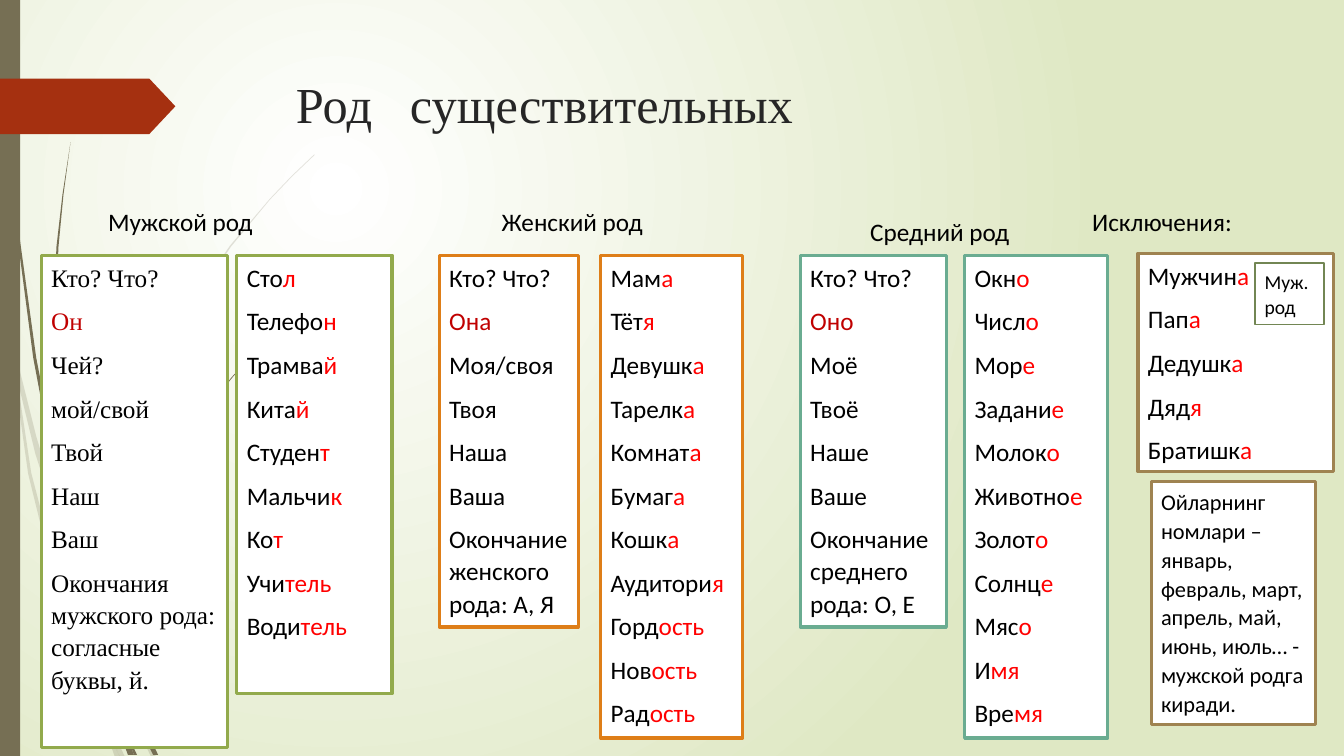
from lxml.etree import SubElement
from pptx import Presentation
from pptx.dml.color import RGBColor
from pptx.enum.shapes import MSO_SHAPE as Preset
from pptx.enum.text import MSO_ANCHOR as Anchor, PP_ALIGN as Align
from pptx.oxml.ns import qn
from pptx.util import Cm, Pt

SANS, SERIF = "Calibri", "Times New Roman"
BLACK, RED, DARK_RED = "000000", "FF0000", "C00000"
OLIVE, RUST = "766F54", "A53010"
GREEN, ORANGE, TEAL, BROWN, MOSS = "92AA4C", "DE7E18", "6AAC91", "9F8351", "728653"

TITLE = "Род   существительных"
HEADINGS = [
    ("Мужской род", 1.88, 5.03, 5.33),
    ("Женский род", 9.86, 5.03, 9.12),
    ("Средний род", 21.46, 5.28, 4.45),
    ("Исключения:", 26.72, 5.03, 5.13),
]
HEADING_HEIGHT = 1.09

MALE_FORMS = ["Кто? Что?", "|Он", "Чей?", "мой/свой", "Твой", "Наш", "Ваш",
              "Окончания мужского рода: согласные буквы, й."]
MALE_WORDS = ["Сто|л", "Телефо|н", "Трамва|й", "Кита|й", "Студен|т", "Мальчи|к",
              "Ко|т", "Учи|тель", "Води|тель"]
FEMALE_FORMS = ["Кто? Что?", "|Она", "Моя/своя", "Твоя", "Наша", "Ваша",
                "Окончание женского рода: А, Я"]
FEMALE_WORDS = ["Мам|а", "Тёт|я", "Девушк|а", "Тарелк|а", "Комнат|а", "Бумаг|а",
                "Кошк|а", "Аудитори|я", "Горд|ость", "Нов|ость", "Рад|ость"]
NEUTER_FORMS = ["Кто? Что?", "|Оно", "Моё", "Твоё", "Наше", "Ваше",
                "Окончание среднего рода: О, Е"]
NEUTER_WORDS = ["Окн|о", "Числ|о", "Мор|е", "Задани|е", "Молок|о", "Животно|е",
                "Золот|о", "Солнц|е", "Мяс|о", "И|мя", "Вре|мя"]
EXCEPTIONS = ["Мужчин|а", "Пап|а", "Дедушк|а", "Дяд|я", "Братишк|а"]
MONTHS = ["Ойларнинг номлари – январь, февраль, март, апрель, май, июнь, июль… - "
          "мужской родга киради."]

TOP = 6.43
CARDS = [
    (MALE_FORMS, (1.04, TOP, 4.7, 12.4), GREEN, 2.25, 18, SERIF, DARK_RED),
    (MALE_WORDS, (5.97, TOP, 3.91, 11.05), GREEN, 2.25, 18, SANS, RED),
    (FEMALE_FORMS, (11.07, TOP, 3.51, 9.37), ORANGE, 2.25, 18, SANS, DARK_RED),
    (FEMALE_WORDS, (15.14, TOP, 3.58, 12.17), ORANGE, 2.25, 18, SANS, RED),
    (NEUTER_FORMS, (20.17, TOP, 3.68, 9.37), TEAL, 2.25, 18, SANS, DARK_RED),
    (NEUTER_WORDS, (24.31, TOP, 3.61, 12.17), TEAL, 2.25, 18, SANS, RED),
    (EXCEPTIONS, (28.68, 6.38, 4.93, 5.51), BROWN, 2.25, 18, SANS, RED),
    (["Муж.род"], (31.62, 6.63, 1.75, 1.55), MOSS, 1.25, 14, SANS, RED),
    (MONTHS, (29.01, 12.14, 4.14, 6.12), BROWN, 2.25, 16, SANS, RED),
]

WISP_UNIT = Cm(2.54) / 100
PALE_WISPS = [
    [(11, 350), (9, 322), (0, 282), (0, 299), (10, 344)],
    [(58, 522), (84, 599), (85, 586), (62, 520), (36, 433), (14, 345), (17, 376), (35, 450)],
    [(92, 607), (88, 596), (88, 610), (123, 694), (150, 751), (155, 751), (127, 692)],
    [(119, 751), (124, 751), (105, 711)],
    [(93, 683), (70, 619), (31, 469), (17, 376), (11, 350), (28, 470), (65, 621),
     (92, 693), (101, 714), (99, 707)],
    [(88, 584), (110, 462), (160, 349), (229, 245), (268, 198), (290, 175), (312, 154),
     (312, 153), (289, 175), (268, 197), (228, 244), (158, 348), (107, 461), (85, 584),
     (85, 586), (88, 596)],
    [(101, 714), (114, 751), (119, 751)],
    [(96, 692), (93, 683), (99, 707), (101, 714), (119, 751), (105, 711)],
]
DARK_WISPS = [
    [(7, 110), (17, 233), (33, 355), (56, 477), (57, 481), (55, 457), (55, 453), (36, 355),
     (19, 232), (8, 109), (5, 48), (4, 0), (3, 0), (4, 48)],
    [(113, 649), (110, 641), (111, 656), (132, 708), (152, 749), (157, 749), (136, 706)],
    [(60, 472), (58, 453), (54, 349), (58, 245), (63, 193), (70, 141), (62, 193), (56, 245),
     (52, 349), (55, 449)],
    [(133, 749), (136, 749), (122, 719)],
    [(111, 633), (125, 552), (158, 476), (205, 406), (231, 374), (245, 359), (261, 344),
     (260, 344), (245, 358), (231, 373), (204, 405), (156, 474), (122, 551), (106, 631),
     (110, 641)],
    [(117, 722), (127, 749), (131, 749)],
    [(116, 706), (110, 691), (116, 717), (117, 722), (130, 749), (133, 749), (122, 719)],
]


def color(value):
    return RGBColor.from_string(value)


def paint(shape, fill, line=None, width=0):
    shape.shadow.inherit = False
    shape.fill.solid()
    shape.fill.fore_color.rgb = color(fill)
    if line:
        shape.line.color.rgb = color(line)
        shape.line.width = Pt(width)
    else:
        shape.line.fill.background()


def write(shape, lines, size, font, ink=BLACK, accent=RED, align=Align.LEFT, spaced=True):
    frame = shape.text_frame
    frame.word_wrap = True
    frame.vertical_anchor = Anchor.TOP
    frame.text = "\n".join(line.replace("|", "") for line in lines)
    for para, line in zip(frame.paragraphs, lines):
        para.text = ""
        para.alignment = align
        if spaced:
            para.line_spacing = 1.07
            para.space_after = Pt(8)
        stem, _, ending = line.partition("|")
        for part, tint in ((stem, ink), (ending, accent)):
            if part:
                span = para.add_run()
                span.text = part
                span.font.size = Pt(size)
                span.font.name = font
                span.font.color.rgb = color(tint)


def add_wisp(page, outline, opacity):
    builder = page.shapes.build_freeform(*outline[0], scale=WISP_UNIT)
    builder.add_line_segments(outline[1:], close=True)
    wisp = builder.convert_to_shape()
    paint(wisp, OLIVE)
    if opacity < 100:
        tint = wisp.element.find(".//" + qn("a:srgbClr"))
        SubElement(tint, qn("a:alpha"), val=str(opacity * 1000))


def add_glow(page):
    fill = page.background.fill
    fill.gradient()
    for stop, tint in zip(fill.gradient_stops, ("FFFFFF", "DFE8C4")):
        stop.color.rgb = color(tint)
    gradient = page.element.find(".//" + qn("a:gradFill"))
    gradient.remove(gradient.find(qn("a:lin")))
    circle = SubElement(gradient, qn("a:path"), path="circle")
    SubElement(circle, qn("a:fillToRect"), l="50000", t="50000", r="100000", b="100000")


def main():
    deck = Presentation()
    deck.slide_width, deck.slide_height = Cm(33.87), Cm(19.05)
    page = deck.slides.add_slide(deck.slide_layouts[6])
    add_glow(page)

    for wisps, opacity in ((PALE_WISPS, 20), (DARK_WISPS, 100)):
        for outline in wisps:
            add_wisp(page, outline, opacity)

    side = page.shapes.add_shape(Preset.RECTANGLE, 0, 0, Cm(0.51), deck.slide_height)
    paint(side, OLIVE)
    arrow = page.shapes.add_shape(Preset.PENTAGON, 0, Cm(1.98), Cm(4.42), Cm(1.4))
    arrow.adjustments[0] = 0.47
    paint(arrow, RUST)

    title = page.shapes.add_textbox(Cm(7.21), Cm(1.73), Cm(24.77), Cm(3.56))
    write(title, [TITLE], 36, SERIF, ink="262626", spaced=False)
    for text, left, top, width in HEADINGS:
        box = page.shapes.add_textbox(Cm(left), Cm(top), Cm(width), Cm(HEADING_HEIGHT))
        write(box, [text], 18, SANS, align=Align.CENTER)

    for lines, place, border, width, size, font, accent in CARDS:
        card = page.shapes.add_shape(Preset.RECTANGLE, *map(Cm, place))
        paint(card, "FFFFFF", border, width)
        write(card, lines, size, font, accent=accent)

    deck.save("out.pptx")


if __name__ == "__main__":
    main()
